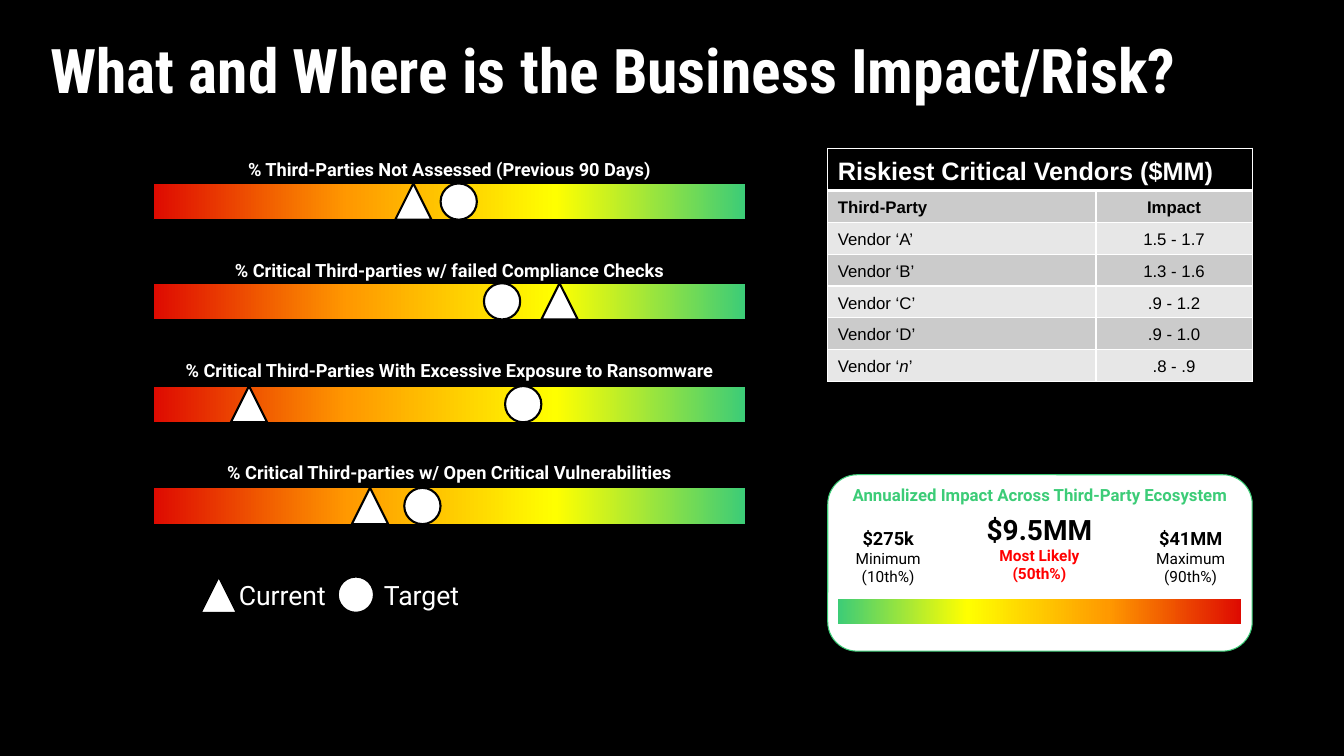
from dataclasses import dataclass

from lxml import etree
from pptx import Presentation
from pptx.dml.color import RGBColor
from pptx.enum.shapes import MSO_SHAPE
from pptx.enum.text import MSO_ANCHOR, MSO_AUTO_SIZE, PP_ALIGN
from pptx.oxml.ns import qn
from pptx.util import Inches, Pt

LEFT, CENTER = PP_ALIGN.LEFT, PP_ALIGN.CENTER
TOP = MSO_ANCHOR.TOP
NO_FIT = MSO_AUTO_SIZE.NONE
RECTANGLE, ROUNDED = MSO_SHAPE.RECTANGLE, MSO_SHAPE.ROUNDED_RECTANGLE
TRIANGLE, CIRCLE = MSO_SHAPE.ISOSCELES_TRIANGLE, MSO_SHAPE.OVAL


@dataclass(frozen=True)
class Theme:
    black: str = "000000"
    white: str = "FFFFFF"
    green: str = "3CCC77"
    red: str = "FF0000"
    dark_band: str = "CBCBCB"
    light_band: str = "E7E7E7"
    scale: tuple = ((0, "3CCC77"), (32, "FFFF00"), (67, "FF9900"), (100, "DE0A01"))
    heading_font: str = "Roboto Condensed"
    body_font: str = "Roboto"
    table_font: str = "Arial"
    title: int = 44
    likely: int = 20
    legend: int = 19
    table_title: int = 18
    label: int = 13
    cell: int = 12
    caption: int = 11


theme = Theme()


def write(frame, text, *, size, color, font=theme.body_font, bold=False, align=CENTER, spacing=1.0):
    """Add one paragraph; text between underscores is italic."""
    para = frame.paragraphs[0]
    if para.runs:
        para = frame.add_paragraph()
    para.alignment = align
    para.line_spacing = spacing
    for index, part in enumerate(text.split("_")):
        span = para.add_run()
        span.text = part
        span.font.size = Pt(size)
        span.font.name = font
        span.font.bold = bold
        span.font.italic = index % 2 == 1
        span.font.color.rgb = RGBColor.from_string(color)


def draw(kind, left, top, width, height, *, line, weight=0.75, fill=theme.white, angle=None):
    """Add a shape, filled with the risk scale when an angle is given."""
    shape = page.shapes.add_shape(kind, Inches(left), Inches(top), Inches(width), Inches(height))
    shape.shadow.inherit = False
    shape.line.color.rgb = RGBColor.from_string(line)
    shape.line.width = Pt(weight)
    if angle is None:
        shape.fill.solid()
        shape.fill.fore_color.rgb = RGBColor.from_string(fill)
        return
    shape.fill.gradient()
    shape.fill.gradient_angle = angle
    stops = next(shape.element.iter(qn("a:gsLst")))
    for stop in list(stops):
        stops.remove(stop)
    for position, color in theme.scale:
        stop = etree.SubElement(stops, qn("a:gs"), pos=str(position * 1000))
        etree.SubElement(stop, qn("a:srgbClr"), val=color)


deck = Presentation()
deck.slide_width, deck.slide_height = Inches(13.33), Inches(7.5)
page = deck.slides.add_slide(deck.slide_layouts[5])
page.background.fill.solid()
page.background.fill.fore_color.rgb = RGBColor.from_string(theme.black)

title = page.shapes.title
title.left, title.top, title.width, title.height = map(Inches, (0.5, 0.4, 12.33, 0.48))
frame = title.text_frame
frame.margin_left = frame.margin_top = frame.margin_right = frame.margin_bottom = 0
frame.vertical_anchor = TOP
frame.auto_size = NO_FIT
frame.word_wrap = True
write(frame, "What and Where is the Business Impact/Risk?", size=theme.title, color=theme.white,
      font=theme.heading_font, bold=True, align=LEFT, spacing=0.9)

# Vendor table
vendors = [
    ("Riskiest Critical Vendors ($MM)", ""),
    ("Third-Party", "Impact"),
    ("Vendor ‘A’", "1.5 - 1.7"),
    ("Vendor ‘B’", "1.3 - 1.6"),
    ("Vendor ‘C’", ".9 - 1.2"),
    ("Vendor ‘D’", ".9 - 1.0"),
    ("Vendor ‘_n_’", ".8 - .9"),
]
table = page.shapes.add_table(len(vendors), 2, Inches(8.21), Inches(1.47),
                              Inches(4.21), Inches(1.91)).table
table.columns[0].width, table.columns[1].width = Inches(2.66), Inches(1.55)
table.cell(0, 0).merge(table.cell(0, 1))
for row, texts in enumerate(vendors):
    table.rows[row].height = Inches(0.26 if row else 0.35)
    band = theme.dark_band if row % 2 else theme.light_band
    for column, text in enumerate(texts):
        cell = table.cell(row, column)
        properties = cell._tc.get_or_add_tcPr()
        for side in ("L", "R", "T", "B"):
            heavy = (row, side) in ((0, "B"), (1, "T"))
            edge = etree.SubElement(properties, qn("a:ln" + side), w=str(Pt(2.81 if heavy else 0.94)))
            paint = etree.SubElement(edge, qn("a:solidFill"))
            etree.SubElement(paint, qn("a:srgbClr"), val=theme.white)
        cell.fill.solid()
        cell.fill.fore_color.rgb = RGBColor.from_string(band if row else theme.black)
        if text:
            write(cell.text_frame, text, size=theme.cell if row else theme.table_title,
                  color=theme.black if row else theme.white, font=theme.table_font,
                  bold=row < 2, align=CENTER if column else LEFT, spacing=1.15)

# Impact card
draw(ROUNDED, 8.21, 4.71, 4.21, 1.75, line=theme.green)
draw(RECTANGLE, 8.31, 5.94, 4, 0.26, line=theme.white, angle=0)

amount = dict(size=theme.label, color=theme.black, bold=True)
caption = dict(size=theme.caption, color=theme.black)
likely = dict(size=theme.caption, color=theme.red, bold=True)
legend = dict(size=theme.legend, color=theme.white, align=LEFT)
text_boxes = [
    (8.26, 4.71, 4.11, 0.4, [("Annualized Impact Across Third-Party Ecosystem",
                              dict(size=theme.cell, color=theme.green, bold=True))]),
    (8.31, 5.13, 1, 0.77, [("$275k", amount), ("Minimum (10th%)", caption)]),
    (8.31, 4.98, 4, 0.36, [("$9.5MM", dict(size=theme.likely, color=theme.black, bold=True)),
                           ("Most Likely", likely), ("(50th%)", likely)]),
    (11.31, 5.13, 1, 0.56, [("$41MM", amount), ("Maximum", caption), ("(90th%)", caption)]),
    (2.27, 5.64, 1.23, 0.64, [("Current", legend)]),
    (3.71, 5.64, 1.37, 0.64, [("Target", legend)]),
]

# Risk gauges: label, label top, bar top, current position, target position
gauges = [
    ("% Third-Parties Not Assessed (Previous 90 Days)", 1.47, 1.82, 3.92, 4.37),
    ("% Critical Third-parties w/ failed Compliance Checks", 2.47, 2.81, 5.37, 4.8),
    ("% Critical Third-Parties With Excessive Exposure to Ransomware", 3.46, 3.83, 2.29, 5.01),
    ("% Critical Third-parties w/ Open Critical Vulnerabilities", 4.48, 4.84, 3.49, 4.01),
]
markers = [(5.72, 1.99, 3.35)]
for label, label_top, bar_top, current, target in gauges:
    draw(RECTANGLE, 1.52, bar_top, 5.87, 0.36, line=theme.black, angle=180)
    text_boxes.append((1.52, label_top, 5.87, 0.28,
                       [(label, dict(size=theme.label, color=theme.white, bold=True))]))
    markers.append((bar_top, current, target))

for left, top, width, height, lines in text_boxes:
    box = page.shapes.add_textbox(Inches(left), Inches(top), Inches(width), Inches(height))
    frame = box.text_frame
    frame.word_wrap = True
    frame.vertical_anchor = TOP
    frame.margin_left = frame.margin_top = frame.margin_right = frame.margin_bottom = Inches(0.1)
    for text, style in lines:
        write(frame, text, **style)

for top, current, target in markers:
    for kind, left in ((TRIANGLE, current), (CIRCLE, target)):
        draw(kind, left, top, 0.36, 0.36, line=theme.black, weight=1.5)

deck.save("out.pptx")
